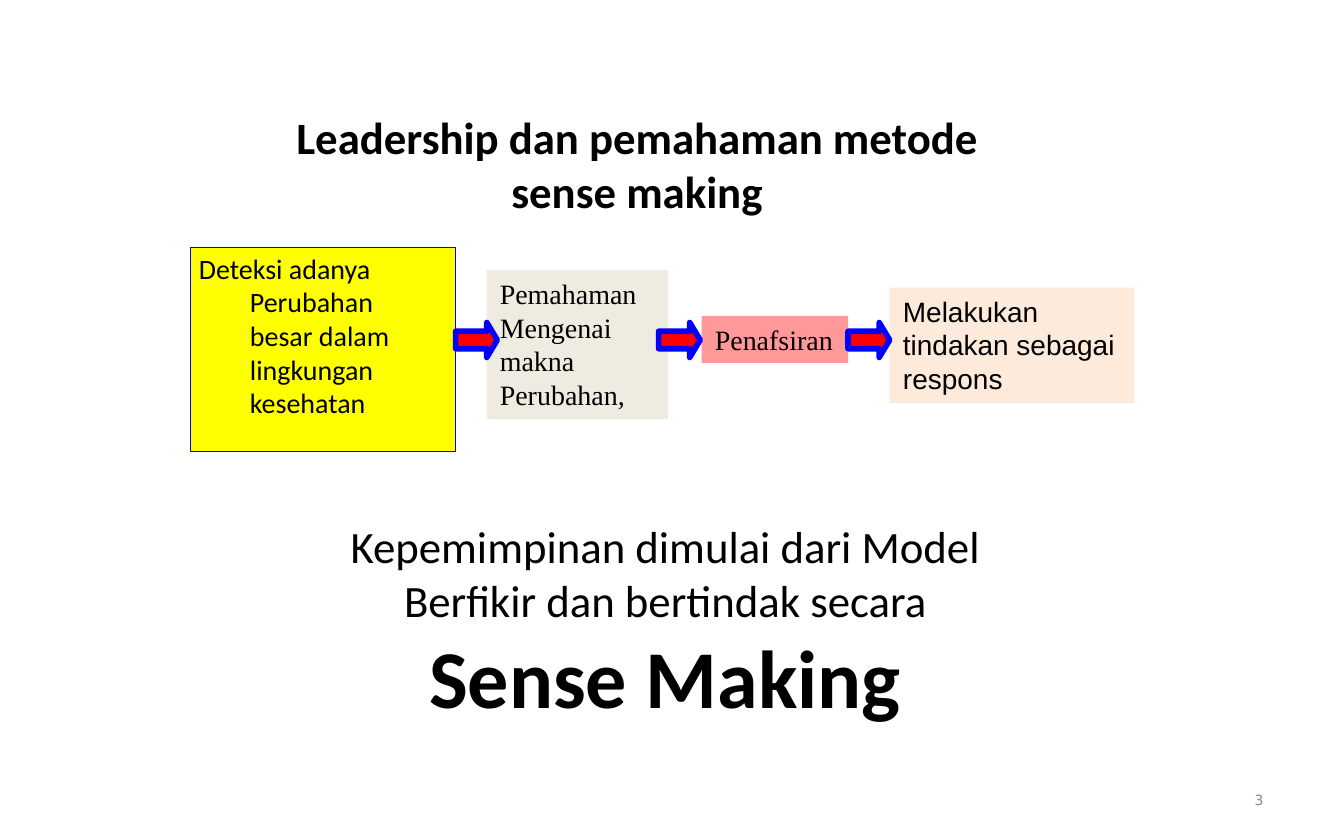
from pptx import Presentation
from pptx.dml.color import RGBColor
from pptx.enum.shapes import MSO_SHAPE
from pptx.enum.text import MSO_ANCHOR, MSO_AUTO_SIZE, PP_ALIGN
from pptx.util import Inches, Pt

BLACK = RGBColor(0x00, 0x00, 0x00)
GRAY = RGBColor(0x89, 0x89, 0x89)
YELLOW = RGBColor(0xFF, 0xFF, 0x00)
BEIGE = RGBColor(0xEE, 0xEC, 0xE1)
PINK = RGBColor(0xFF, 0x99, 0x99)
PEACH = RGBColor(0xFD, 0xEA, 0xDA)
RED = RGBColor(0xFF, 0x00, 0x00)
BLUE = RGBColor(0x00, 0x00, 0xFF)

# left, top, width, height, fill, font, text
STEPS = [
    (3.62, 2.01, 1.35, 1.11, BEIGE, "Times New Roman", "Pemahaman Mengenai makna Perubahan,"),
    (5.22, 2.35, 1.09, 0.35, PINK, "Times New Roman", "Penafsiran"),
    (6.62, 2.14, 1.82, 0.86, PEACH, "Arial", "Melakukan tindakan sebagai respons"),
]
ARROW_LEFTS = [3.39, 4.9, 6.31]


def place(shape, left, top, width, height):
    for name, value in dict(left=left, top=top, width=width, height=height).items():
        setattr(shape, name, Inches(value))


def format_frame(frame, insets=(0.1, 0.05, 0.1, 0.05), anchor=MSO_ANCHOR.TOP):
    """Insets run left, top, right, bottom."""
    sides = ("margin_left", "margin_top", "margin_right", "margin_bottom")
    values = dict(zip(sides, map(Inches, insets)))
    values.update(word_wrap=True, auto_size=MSO_AUTO_SIZE.NONE, vertical_anchor=anchor)
    for name, value in values.items():
        setattr(frame, name, value)


def add_span(para, text, size, font="Calibri", color=BLACK, bold=False):
    span = para.add_run()
    span.text = text
    for name, value in dict(name=font, size=Pt(size), bold=bold).items():
        setattr(span.font, name, value)
    span.font.color.rgb = color


def add_filled(page, kind, bounds, fill, line=None, line_width=0):
    shape = page.shapes.add_shape(kind, *map(Inches, bounds))
    shape.shadow.inherit = False
    shape.fill.solid()
    shape.fill.fore_color.rgb = fill
    if line is None:
        shape.line.fill.background()
    else:
        shape.line.color.rgb = line
        shape.line.width = Pt(line_width)
    return shape


def add_label(page, bounds, text, align, anchor=MSO_ANCHOR.TOP, **style):
    box = page.shapes.add_textbox(*map(Inches, bounds))
    format_frame(box.text_frame, anchor=anchor)
    para = box.text_frame.paragraphs[0]
    para.alignment = align
    add_span(para, text, **style)


def write_title(page):
    title = page.shapes.title
    place(title, 2.12, 3.77, 5.66, 1.71)
    format_frame(title.text_frame, (0.06, 0.03, 0.06, 0.03), MSO_ANCHOR.MIDDLE)
    para = title.text_frame.paragraphs[0]
    para.alignment = PP_ALIGN.CENTER
    add_span(para, "Kepemimpinan dimulai dari Model Berfikir dan bertindak secara", 24)
    para.add_line_break()
    add_span(para, "Sense Making", 44, bold=True)


def add_step(page, bounds, fill, font, text, insets=(0.1, 0.05, 0.05, 0.05), **outline):
    box = add_filled(page, MSO_SHAPE.RECTANGLE, bounds, fill, **outline)
    format_frame(box.text_frame, insets)
    para = box.text_frame.paragraphs[0]
    para.alignment = PP_ALIGN.LEFT
    add_span(para, text, 15, font)
    return para


def add_detection(page):
    """First step, with a hanging indent."""
    para = add_step(page, (1.42, 1.84, 1.97, 1.52), YELLOW, "Calibri",
                    "Deteksi adanya Perubahan besar dalam lingkungan kesehatan",
                    insets=(0.06, 0.03, 0.15, 0.03), line=BLUE, line_width=0.75)
    properties = para._p.get_or_add_pPr()
    properties.set("marL", str(Inches(0.38)))
    properties.set("indent", str(-Inches(0.38)))


def add_arrow(page, left):
    arrow = add_filled(page, MSO_SHAPE.RIGHT_ARROW, (left, 2.4, 0.31, 0.26), RED, BLUE, 3)
    arrow.adjustments[0] = 0.5
    arrow.adjustments[1] = 0.3


def main():
    deck = Presentation()
    deck.slide_width, deck.slide_height = Inches(10), Inches(6.25)
    page = deck.slides.add_slide(deck.slide_layouts[5])
    write_title(page)
    add_detection(page)
    for *bounds, fill, font, text in STEPS:
        add_step(page, bounds, fill, font, text)
    for left in ARROW_LEFTS:
        add_arrow(page, left)
    add_label(page, (1.7, 0.77, 6.08, 0.91), "Leadership dan pemahaman metode sense making",
              PP_ALIGN.CENTER, size=24, bold=True)
    add_label(page, (7.17, 5.79, 2.33, 0.33), "3", PP_ALIGN.RIGHT, MSO_ANCHOR.MIDDLE,
              size=7.5, font="DejaVu Sans", color=GRAY)
    deck.save("out.pptx")


if __name__ == "__main__":
    main()
